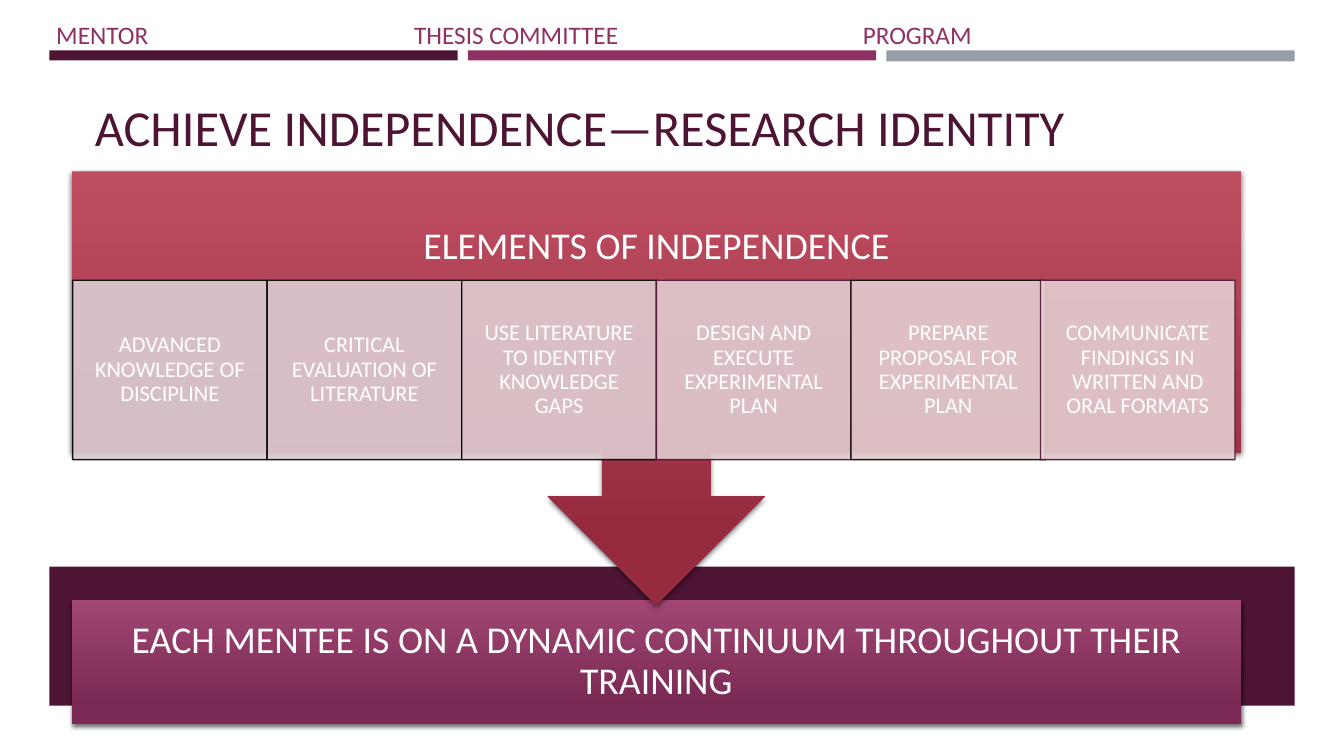
from lxml.etree import SubElement
from pptx import Presentation
from pptx.dml.color import RGBColor
from pptx.enum.shapes import MSO_SHAPE as Shape
from pptx.enum.text import MSO_ANCHOR as Anchor, PP_ALIGN as Align
from pptx.oxml.ns import qn
from pptx.util import Inches, Pt

PLUM, MAGENTA, GRAY, WHITE, BLACK = "4D1434", "903163", "969FA7", "FFFFFF", "000000"
BARS = [(0.49, 0.5, 4.05, 0.1, PLUM), (4.64, 0.5, 4.05, 0.1, MAGENTA),
        (8.79, 0.5, 4.05, 0.11, GRAY), (0.49, 5.62, 12.35, 1.38, PLUM)]
ELEMENTS = [
    (0.72, "ADVANCED KNOWLEDGE OF DISCIPLINE", "DBCED3", BLACK),
    (2.65, "CRITICAL EVALUATION OF LITERATURE", "DDCDD3", BLACK),
    (4.58, "USE LITERATURE TO IDENTIFY KNOWLEDGE GAPS", "DFCDD2", BLACK),
    (6.51, "DESIGN AND EXECUTE EXPERIMENTAL PLAN", "E1CDD1", PLUM),
    (8.44, "PREPARE PROPOSAL FOR EXPERIMENTAL PLAN", "E3CED1", BLACK),
    (10.32, "COMMUNICATE FINDINGS IN WRITTEN AND ORAL FORMATS", "E4CED0", PLUM),
]


def rgb(value):
    """Turn a hex string into a colour."""
    return RGBColor.from_string(value)


def write(shape, text, size, color, align=Align.CENTER, anchor=Anchor.MIDDLE,
          insets=(0.1, 0.05, 0.1, 0.05), spacing=0.9):
    """Put one formatted paragraph in a shape and return it."""
    frame = shape.text_frame
    frame.text = text
    frame.word_wrap = True
    frame.vertical_anchor = anchor
    (frame.margin_left, frame.margin_top,
     frame.margin_right, frame.margin_bottom) = map(Inches, insets)
    para = frame.paragraphs[0]
    para.alignment = align
    para.line_spacing = spacing
    for span in para.runs:
        span.font.name = "Calibri"
        span.font.size = Pt(size)
        span.font.color.rgb = rgb(color)
    return para


def add_box(page, kind, left, top, width, height):
    """Add a preset shape without line or shadow."""
    box = page.shapes.add_shape(kind, *map(Inches, (left, top, width, height)))
    box.shadow.inherit = False
    box.line.fill.background()
    return box


def add_bar(page, left, top, width, height, color):
    """Add a plain solid bar."""
    bar = add_box(page, Shape.RECTANGLE, left, top, width, height)
    bar.fill.solid()
    bar.fill.fore_color.rgb = rgb(color)


def set_alpha(fill, percent):
    """Set the opacity of the solid colour under an XML element."""
    color = next(fill.iter(qn("a:srgbClr")))
    SubElement(color, qn("a:alpha"), val=str(percent * 1000))


def add_panel(page, kind, top, height, colors, text, insets):
    """Add a wide gradient panel with a soft shadow and a caption."""
    panel = add_box(page, kind, 0.71, top, 11.6, height)
    panel.fill.gradient()
    panel.fill.gradient_angle = 270
    for stop, position, color in zip(panel.fill.gradient_stops, (0, 0.84), colors):
        stop.position = position
        stop.color.rgb = rgb(color)
    effects = panel.element.spPr.find(qn("a:effectLst"))
    shadow = SubElement(effects, qn("a:outerShdw"), blurRad=str(Pt(3)),
                        dist=str(Pt(2)), dir="5400000", rotWithShape="0")
    SubElement(shadow, qn("a:srgbClr"), val=BLACK)
    set_alpha(shadow, 55)
    write(panel, text, 27, WHITE, insets=insets)


def add_card(page, left, text, color, outline):
    """Add one translucent element card."""
    card = add_box(page, Shape.RECTANGLE, left, 2.78, 1.93, 1.78)
    card.fill.solid()
    card.fill.fore_color.rgb = rgb(color)
    card.line.color.rgb = rgb(outline)
    card.line.width = Pt(1)
    properties = card.element.spPr
    set_alpha(properties.find(qn("a:solidFill")), 90)
    set_alpha(properties.find(qn("a:ln")), 90)
    write(card, text, 16, WHITE, insets=(0.12, 0.02, 0.12, 0.02))


def add_header(page, labels, stops):
    """Add the header labels, aligned on tab stops."""
    header = page.shapes.add_textbox(*map(Inches, (0.46, 0.14, 12.06, 0.66)))
    para = write(header, "\t".join(labels), 18, MAGENTA, Align.LEFT, Anchor.TOP, spacing=1.0)
    para.space_after = Pt(6)
    tabs = SubElement(para.runs[0].font._element.getparent().getparent().get_or_add_pPr(),
                      qn("a:tabLst"))
    for stop in stops:
        SubElement(tabs, qn("a:tab"), pos=str(Inches(stop)), algn="l")


def set_title(page, text):
    """Place and format the slide title."""
    title = page.shapes.title
    title.left, title.top, title.width, title.height = map(Inches, (0.84, 0.47, 12.06, 1.64))
    write(title, text, 36, PLUM, Align.LEFT)


def main():
    """Build the slide and save the deck."""
    deck = Presentation()
    deck.slide_width, deck.slide_height = Inches(13.33), Inches(7.5)
    page = deck.slides.add_slide(deck.slide_layouts[5])
    for bar in BARS:
        add_bar(page, *bar)
    set_title(page, "ACHIEVE INDEPENDENCE—RESEARCH IDENTITY")
    add_header(page, ("MENTOR", "THESIS COMMITTEE", "PROGRAM"), (3.55, 8.0))
    add_panel(page, Shape.RECTANGLE, 5.95, 1.23, ("A24774", "792953"),
              "EACH MENTEE IS ON A DYNAMIC CONTINUUM THROUGHOUT THEIR TRAINING",
              (0.21, 0.21, 0.21, 0.21))
    add_panel(page, Shape.DOWN_ARROW_CALLOUT, 1.7, 4.3, ("BF4E61", "962A3F"),
              "ELEMENTS OF INDEPENDENCE", (0.21, 0.21, 0.21, 1.49))
    for element in ELEMENTS:
        add_card(page, *element)
    deck.save("out.pptx")


if __name__ == "__main__":
    main()
